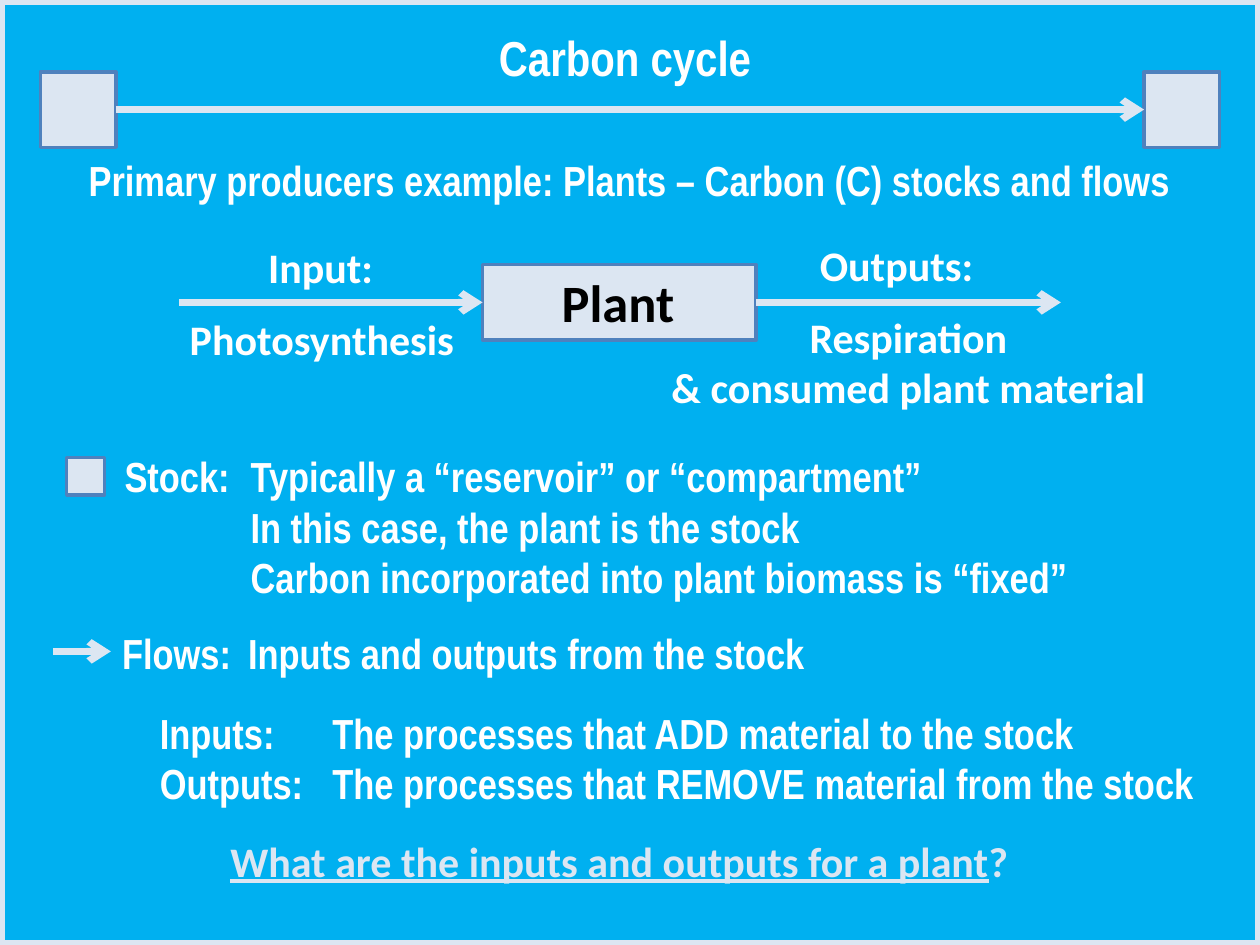
"""Build the carbon cycle slide on stocks and flows of a plant."""
from dataclasses import dataclass

from lxml.etree import SubElement
from pptx import Presentation
from pptx.dml.color import RGBColor as RGB
from pptx.enum.shapes import MSO_CONNECTOR as CONN, MSO_SHAPE as SHAPE
from pptx.enum.text import MSO_AUTO_SIZE as FIT, PP_ALIGN as ALIGN
from pptx.oxml.ns import qn
from pptx.util import Inches, Pt


@dataclass(frozen=True)
class Theme:
    sky: RGB = RGB.from_string("00B0F0")
    pale: RGB = RGB.from_string("DCE6F2")
    edge: RGB = RGB.from_string("4F81BD")
    white: RGB = RGB.from_string("FFFFFF")
    black: RGB = RGB.from_string("000000")
    narrow: str = "Arial Narrow"
    round: str = "Calibri"
    title: int = 28
    body: int = 24
    stock: int = 30


T = Theme()
COLS, ROWS = 100, 75


def add_run(p, text, font=T.narrow, size=T.body, color=T.white, underline=None):
    r = p.add_run()
    r.text = text
    f = r.font
    f.name, f.size, f.bold, f.underline = font, Pt(size), True, underline
    f.color.rgb = color
    return r


class Board:
    def __init__(self, prs):
        self.x_unit = prs.slide_width / COLS
        self.y_unit = prs.slide_height / ROWS
        self.slide = prs.slides.add_slide(prs.slide_layouts[6])
        fill = self.slide.background.fill
        fill.solid()
        fill.fore_color.rgb = T.sky

    def grid(self, *lengths):
        units = (self.x_unit, self.y_unit) * 2
        return [round(n * u) for n, u in zip(lengths, units)]

    def box(self, *at, fill=T.pale, line=T.edge, weight=2):
        sp = self.slide.shapes.add_shape(SHAPE.RECTANGLE, *self.grid(*at))
        sp.shadow.inherit = False
        if fill is None:
            sp.fill.background()
        else:
            sp.fill.solid()
            sp.fill.fore_color.rgb = fill
        sp.line.color.rgb = line
        sp.line.width = Pt(weight)

    def arrow(self, x1, x2, y):
        ends = self.grid(x1, y, x2, y)
        sp = self.slide.shapes.add_connector(CONN.STRAIGHT, *ends)
        sp.line.color.rgb = T.pale
        sp.line.width = Pt(4)
        SubElement(sp.line._get_or_add_ln(), qn("a:tailEnd"), type="arrow")
        SubElement(sp._element.spPr, qn("a:effectLst"))

    def text(self, lines, *at, align=ALIGN.CENTER, **style):
        sp = self.slide.shapes.add_textbox(*self.grid(*at))
        tf = sp.text_frame
        tf.word_wrap = True
        tf.auto_size = FIT.SHAPE_TO_FIT_TEXT
        for i, line in enumerate(lines):
            p = tf.add_paragraph() if i else tf.paragraphs[0]
            p.alignment = align
            add_run(p, line, **style)
        return tf.paragraphs

    def tabs(self, p, *stops):
        tab_list = SubElement(p._p.get_or_add_pPr(), qn("a:tabLst"))
        for stop in stops:
            SubElement(tab_list, qn("a:tab"), pos=str(round(stop * self.x_unit)), algn="l")


def main():
    prs = Presentation()
    prs.slide_width, prs.slide_height = Inches(10), Inches(7.5)
    b = Board(prs)

    b.box(0, 0, COLS, ROWS, fill=None, line=T.pale, weight=6)
    for x in (3.2, 90.8):
        b.box(x, 5.7, 6, 6)
    b.arrow(9.2, 90.8, 8.7)
    b.text(["Carbon cycle"], 7.5, 1.7, 84.2, 5.7, size=T.title)
    b.text(["Primary producers example: Plants – Carbon (C) stocks and flows"],
           3.3, 11.8, 93.3, 5)

    b.box(38.3, 21, 21.7, 6)
    b.text(["Plant"], 42.8, 20.9, 12.5, 6.1, font=T.round, size=T.stock, color=T.black)
    for x1, x2 in ((14.2, 38.3), (60, 84.2)):
        b.arrow(x1, x2, 24)
    for lines, *at in (
        (["Input:"], 11.7, 18.7, 27.5, 5),
        (["Photosynthesis"], 11.8, 24.4, 27.5, 5),
        (["Outputs:"], 57.4, 18.5, 27.5, 5),
        (["Respiration", "& consumed plant material"], 47.5, 24.2, 49.2, 9.1),
    ):
        b.text(lines, *at, font=T.round)

    b.box(5.3, 36.3, 3, 3)
    stock = b.text(["Stock:\tTypically a “reservoir” or “compartment”",
                    "\tIn this case, the plant is the stock",
                    "\tCarbon incorporated into plant biomass is “fixed”"],
                   8.9, 35.3, 86.3, 13.1, align=ALIGN.LEFT)
    b.arrow(4.2, 8.8, 51.7)
    flows = b.text(["Flows:\tInputs and outputs from the stock",
                    "\tInputs:\tThe processes that ADD material to the stock",
                    "\tOutputs:\tThe processes that REMOVE material from the stock"],
                   8.7, 49.3, 88.2, 15.7, align=ALIGN.LEFT)
    flows[1].space_before = Pt(17)
    for p in (*stock, flows[0]):
        b.tabs(p, 10)
    for p in flows[1:]:
        b.tabs(p, 3, 16.7)

    ask = dict(font=T.round, color=T.pale)
    question, = b.text(["What are the inputs and outputs for a plant"],
                       12.5, 65.8, 73.3, 5, underline=True, **ask)
    add_run(question, "?", **ask)

    prs.save("out.pptx")


if __name__ == "__main__":
    main()
